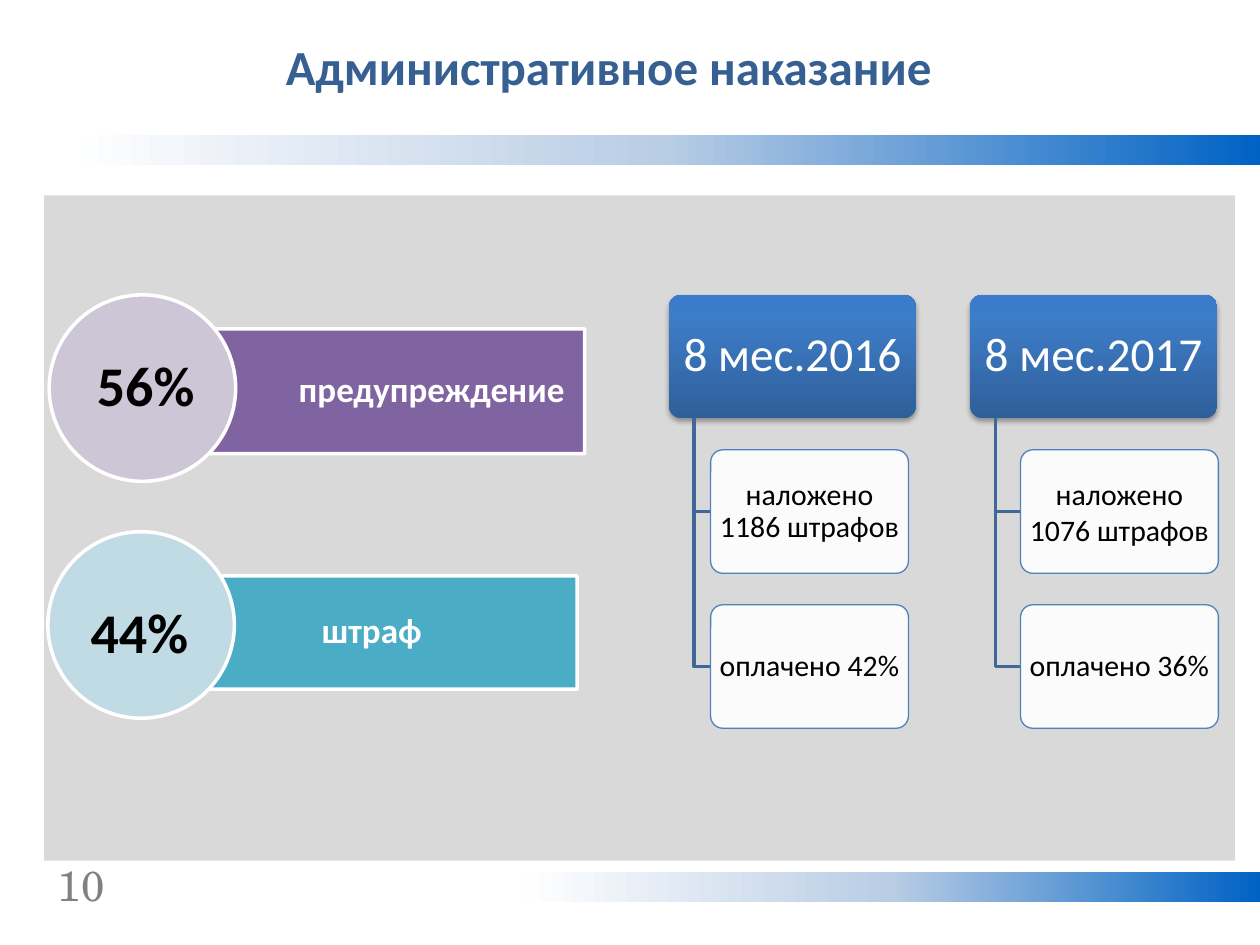
from lxml.etree import SubElement
from pptx import Presentation
from pptx.dml.color import RGBColor
from pptx.enum.shapes import MSO_SHAPE
from pptx.enum.text import MSO_ANCHOR, PP_ALIGN
from pptx.oxml.ns import qn
from pptx.util import Inches, Pt

TITLE = "Административное наказание"
NUMBER = "10"
BANDS = [(0.51, 1.07), (4.13, 6.92)]  # left, top; both run to the right edge
BAND_STOPS = [(0, "0062C4"), (50, "B9CDE5"), (100, "FFFFFF")]
HEAD_STOPS = [(0, "2F5F99"), (80, "3D7CC7"), (100, "3A7CCB")]

# label, alignment, bar box, bar colour, circle corner, circle colour, share, share box
BARS = [
    ("предупреждение", PP_ALIGN.RIGHT, (0.62, 2.61, 4.02, 0.99), "8064A2",
     (0.39, 2.34), "CDC6D7", "56%", (0.67, 2.73, 0.99, 0.64)),
    ("штраф", PP_ALIGN.CENTER, (0.83, 4.57, 3.75, 0.9), "4BACC6",
     (0.38, 4.22), "C1DBE5", "44%", (0.62, 4.69, 1.09, 0.64)),
]
CIRCLE = 1.48

# heading, left, indent of the cards, cards as (text, line spacing)
TREES = [
    ("8 мес.2016", 5.31, 0.33, [("наложено 1186 штрафов", 0.9), ("оплачено 42%", 0.9)]),
    ("8 мес.2017", 7.7, 0.4, [("наложено\n1076 штрафов", 1), ("оплачено 36%", 0.9)]),
]
TOP, STEP, TALL = 2.34, 1.23, 0.98
HEAD_WIDE, CARD_WIDE, STEM = 1.96, 1.57, 0.2

prs = Presentation()
prs.slide_width, prs.slide_height = Inches(10), Inches(7.5)
slide = prs.slides.add_slide(prs.slide_layouts[5])
shapes = slide.shapes


def color(code):
    return RGBColor.from_string(code)


def stroke(shape, code, width):
    shape.line.color.rgb = color(code)
    shape.line.width = Pt(width)


def block(kind, box, fill=None, line=None, width=2):
    shape = shapes.add_shape(kind, *map(Inches, box))
    shape.shadow.inherit = False
    if fill:
        shape.fill.solid()
        shape.fill.fore_color.rgb = color(fill)
    if line:
        stroke(shape, line, width)
    else:
        shape.line.fill.background()
    return shape


def blend(shape, stops, angle):
    """Fill with a linear gradient; the angle is clockwise, in degrees."""
    shape.fill.gradient()
    grad = shape.fill._xPr.find(qn("a:gradFill"))
    for child in list(grad):
        grad.remove(child)
    group = SubElement(grad, qn("a:gsLst"))
    for pos, code in stops:
        stop = SubElement(group, qn("a:gs"), pos=str(pos * 1000))
        SubElement(stop, qn("a:srgbClr"), val=code)
    SubElement(grad, qn("a:lin"), ang=str(angle * 60000), scaled="0")


def shade(shape):
    effects = shape._element.spPr.find(qn("a:effectLst"))
    outer = SubElement(effects, qn("a:outerShdw"), blurRad=str(Pt(3.1)),
                       dist=str(Pt(1.8)), dir="5400000", rotWithShape="0")
    black = SubElement(outer, qn("a:srgbClr"), val="000000")
    SubElement(black, qn("a:alpha"), val="35000")


def write(shape, text, size, code, bold=False, align=PP_ALIGN.CENTER,
          anchor=MSO_ANCHOR.MIDDLE, inset=(0.1, 0.05, 0.1, 0.05),
          spacing=1, font="Calibri"):
    frame = shape.text_frame
    frame.text = text
    frame.word_wrap = True
    frame.vertical_anchor = anchor
    (frame.margin_left, frame.margin_top,
     frame.margin_right, frame.margin_bottom) = map(Inches, inset)
    for para in frame.paragraphs:
        para.alignment = align
        para.line_spacing = spacing
        for run in para.runs:
            run.font.size, run.font.name, run.font.bold = Pt(size), font, bold
            run.font.color.rgb = color(code)


def label(box, *args, **kw):
    write(shapes.add_textbox(*map(Inches, box)), *args, **kw)


def elbow(left, top, right, bottom):
    draft = shapes.build_freeform(Inches(left), Inches(top))
    draft.add_line_segments([(Inches(left), Inches(bottom)),
                             (Inches(right), Inches(bottom))], close=False)
    shape = draft.convert_to_shape()
    shape.shadow.inherit = False
    shape.fill.background()
    stroke(shape, "3F6797", 2)


def card(box, **kw):
    shape = block(MSO_SHAPE.ROUNDED_RECTANGLE, box, **kw)
    shape.adjustments[0] = 0.1
    return shape


title = shapes.title
title.left, title.top, title.width, title.height = map(Inches, (0.28, 0.24, 9.1, 0.57))
write(title, TITLE, 28, "376092", bold=True, anchor=MSO_ANCHOR.TOP)

for left, top in BANDS:
    blend(block(MSO_SHAPE.RECTANGLE, (left, top, 10 - left, 0.24)), BAND_STOPS, 180)
label((0.36, 6.77, 0.62, 0.5), NUMBER, 24, "808080", align=PP_ALIGN.LEFT,
      anchor=MSO_ANCHOR.TOP, font="TeX Gyre Schola")
block(MSO_SHAPE.RECTANGLE, (0.35, 1.55, 9.45, 5.28), "D9D9D9")

for name, align, bar, dark, corner, light, share, spot in BARS:
    block(MSO_SHAPE.PENTAGON, bar, dark, "FFFFFF").rotation = 180
    label(bar, name, 20, "FFFFFF", bold=True, align=align,
          inset=(0.65, 0.08, 0.16, 0.08), spacing=0.9)
    block(MSO_SHAPE.OVAL, (*corner, CIRCLE, CIRCLE), light, "FFFFFF")
    label(spot, share, 32, "000000", bold=True, align=PP_ALIGN.LEFT,
          anchor=MSO_ANCHOR.TOP)

for heading, left, indent, cards in TREES:
    head = card((left, TOP, HEAD_WIDE, TALL))
    blend(head, HEAD_STOPS, 270)
    shade(head)
    write(head, heading, 27, "FFFFFF", inset=(0.06, 0.04, 0.06, 0.04), spacing=0.9)
    for row, (text, spacing) in enumerate(cards, 1):
        x, y = left + indent, TOP + row * STEP
        elbow(left + STEM, TOP + TALL, x, y + TALL / 2)
        leaf = card((x, y, CARD_WIDE, TALL), fill="FFFFFF", line="4F81BD", width=0.75)
        tint = leaf.fill._xPr.find(qn("a:solidFill"))[0]
        SubElement(tint, qn("a:alpha"), val="90000")
        write(leaf, text, 17, "000000", inset=(0.04, 0.02, 0.04, 0.02), spacing=spacing)

prs.save("out.pptx")
